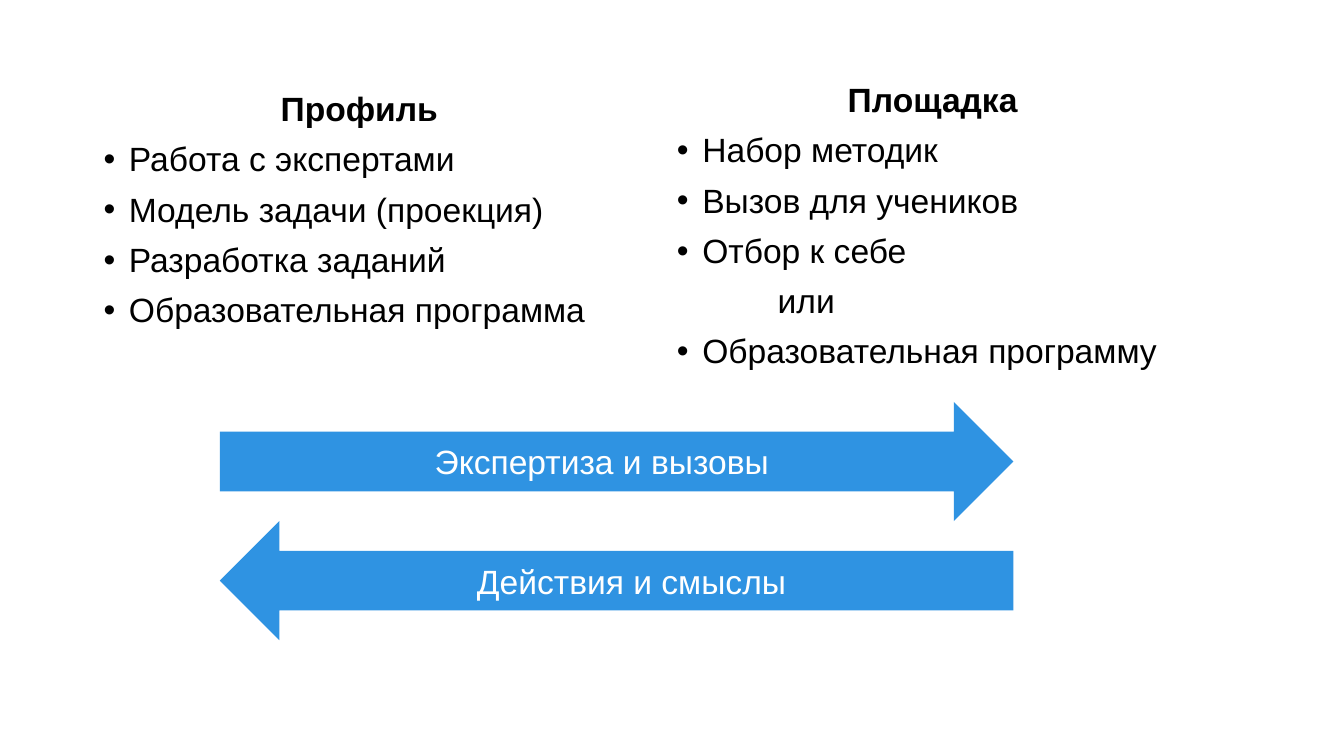
from lxml import etree
from pptx import Presentation
from pptx import util as u
from pptx.dml.color import RGBColor
from pptx.enum import shapes, text
from pptx.oxml.ns import qn


def add_span(para, words, color, bold=False):
    span = para.add_run()
    span.text = words
    span.font.name = "Arial"
    span.font.size = u.Pt(24)
    span.font.bold = bold
    span.font.color.rgb = RGBColor.from_string(color)


def indent(para, left, first=0, bullet=None):
    """Set the left margin and first-line offset, with an optional bullet."""
    props = para._p.get_or_add_pPr()
    props.set("marL", str(left))
    props.set("indent", str(first))
    if bullet:
        font = etree.SubElement(props, qn("a:buFont"))
        font.set("typeface", "Arial")
        etree.SubElement(props, qn("a:buChar")).set("char", bullet)


deck = Presentation()
deck.slide_width, deck.slide_height = u.Cm(33.87), u.Cm(19.05)
page = deck.slides.add_slide(deck.slide_layouts[6])

# Two columns: left, top, height, heading, lines as (words, bulleted)
columns = [
    (2.36, 2.21, 6.83, "Профиль", [
        ("Работа с экспертами", True),
        ("Модель задачи (проекция)", True),
        ("Разработка заданий", True),
        ("Образовательная программа", True),
    ]),
    (16.81, 1.98, 7.59, "Площадка", [
        ("Набор методик", True),
        ("Вызов для учеников", True),
        ("Отбор к себе", True),
        ("или", False),
        ("Образовательная программу", True),
    ]),
]
for left, top, height, heading, lines in columns:
    box = page.shapes.add_textbox(u.Cm(left), u.Cm(top), u.Cm(13.39), u.Cm(height))
    frame = box.text_frame
    frame.word_wrap = True
    title = frame.paragraphs[0]
    title.alignment = text.PP_ALIGN.CENTER
    add_span(title, heading, "000000", bold=True)
    for words, bulleted in lines:
        para = frame.add_paragraph()
        add_span(para, words, "000000")
    for para in frame.paragraphs:
        para.line_spacing = 0.9
        para.space_before = u.Pt(10)
    for para, (words, bulleted) in zip(frame.paragraphs[1:], lines):
        if bulleted:
            indent(para, u.Cm(0.64), -u.Cm(0.64), "•")
        else:
            indent(para, u.Cm(2.54))

# Opposite arrows, stacked edge to edge
arrow_height = 3
arrows = [
    (shapes.MSO_SHAPE.RIGHT_ARROW, "Экспертиза и вызовы"),
    (shapes.MSO_SHAPE.LEFT_ARROW, "Действия и смыслы"),
]
for row, (kind, words) in enumerate(arrows):
    arrow = page.shapes.add_shape(
        kind, u.Cm(5.54), u.Cm(10.13 + row * arrow_height), u.Cm(20), u.Cm(arrow_height))
    arrow.shadow.inherit = False
    arrow.fill.solid()
    arrow.fill.fore_color.rgb = RGBColor.from_string("2F93E2")
    arrow.line.fill.background()
    arrow.text_frame.vertical_anchor = text.MSO_ANCHOR.MIDDLE
    para = arrow.text_frame.paragraphs[0]
    para.alignment = text.PP_ALIGN.CENTER
    add_span(para, words, "FFFFFF")

deck.save("out.pptx")
